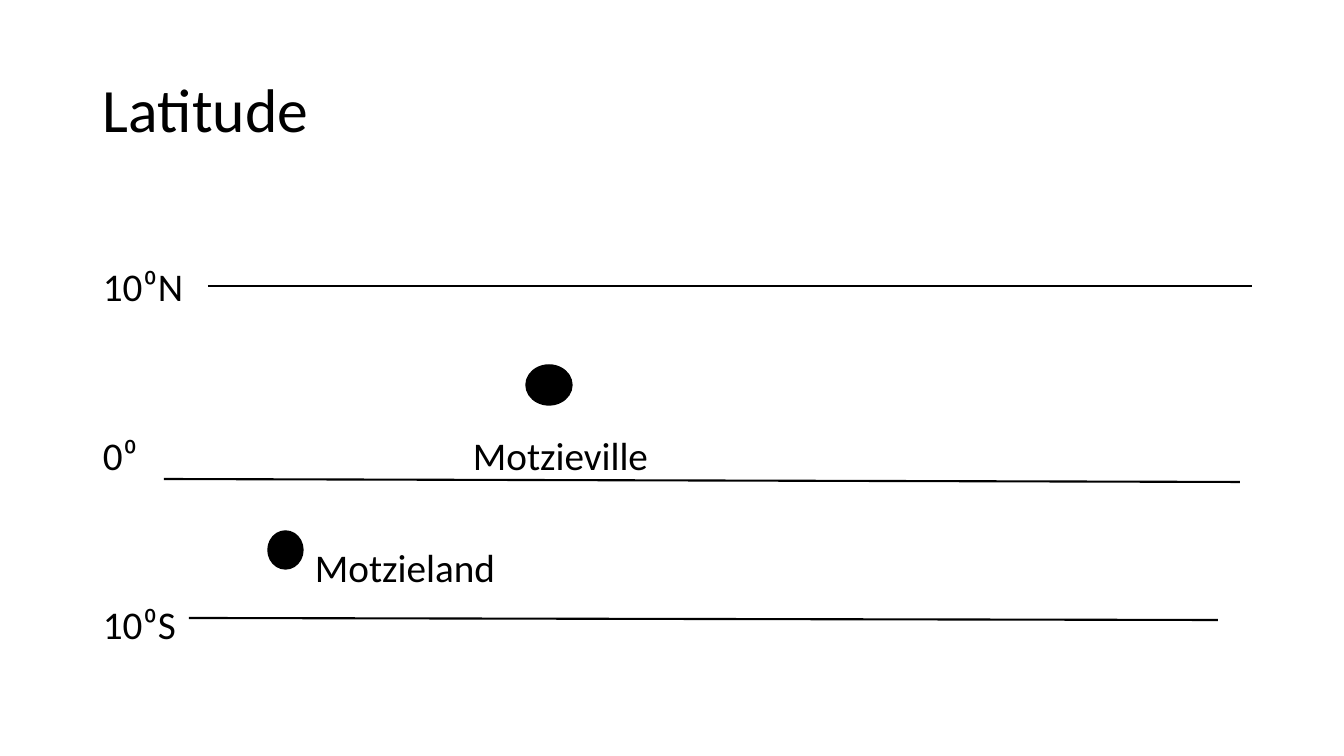
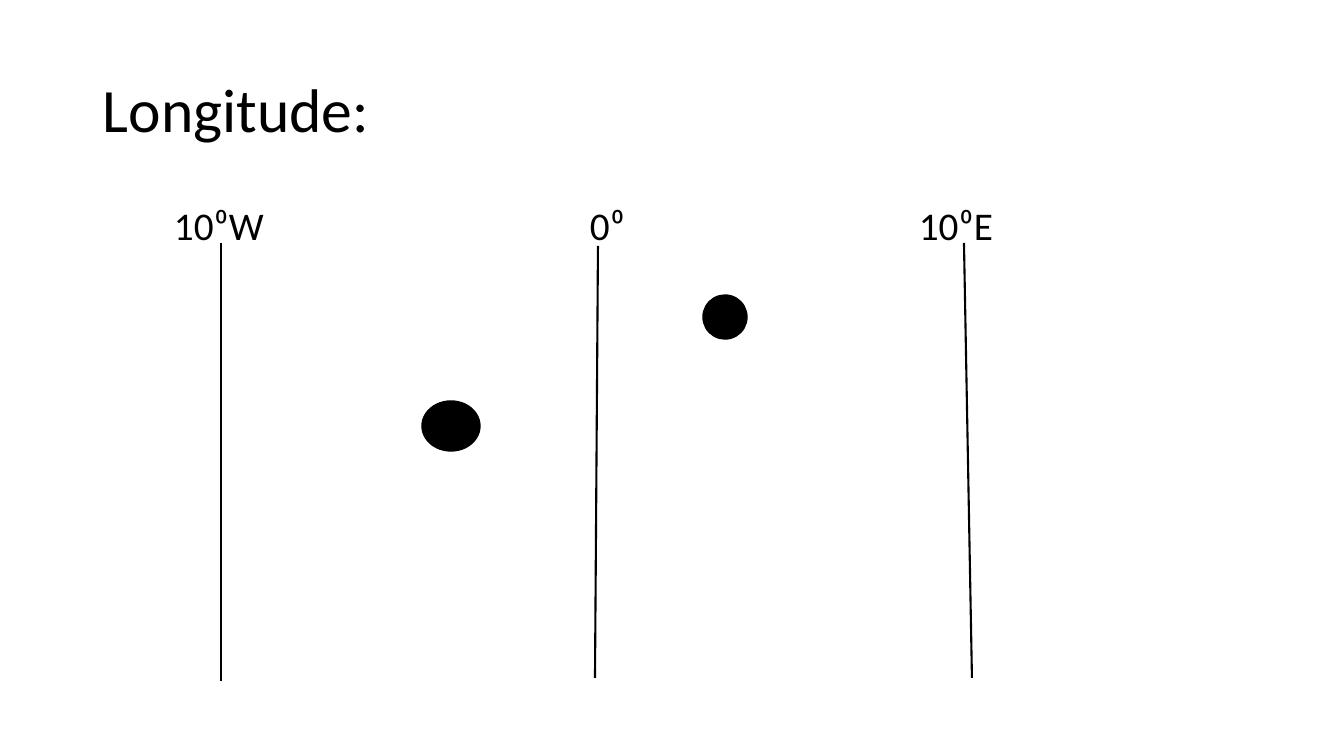
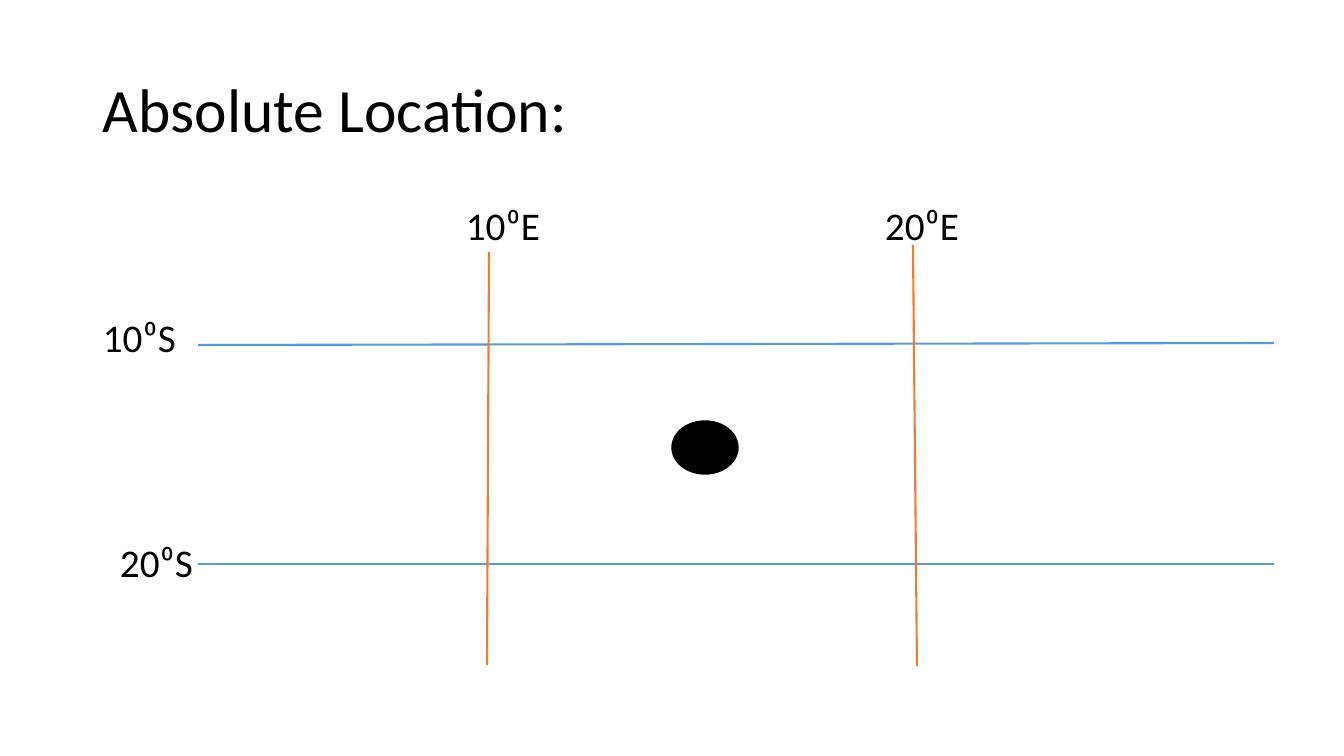
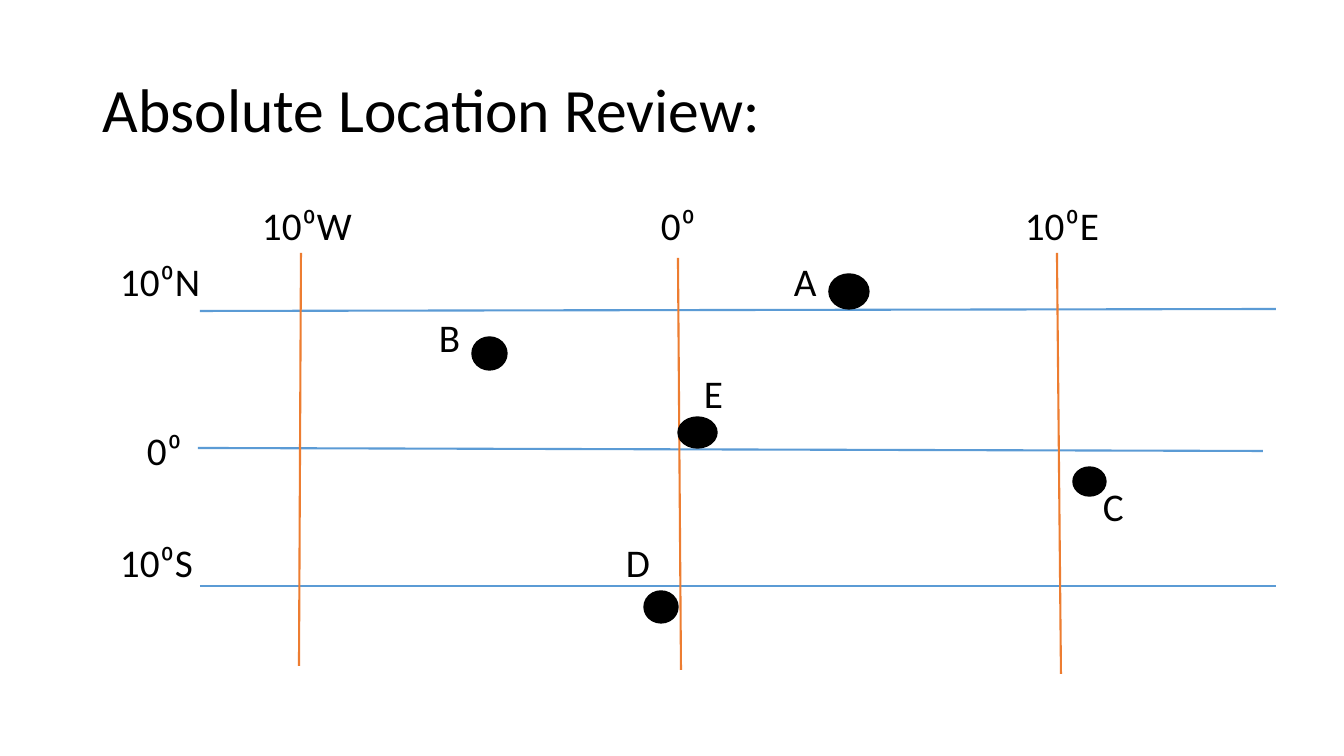
from lxml import etree
from pptx import Presentation
from pptx import util as u
from pptx.dml.color import RGBColor
from pptx.enum import shapes, text
from pptx.oxml import ns

BLACK = RGBColor(0x00, 0x00, 0x00)
ORANGE = RGBColor(0xED, 0x7D, 0x31)
BLUE = RGBColor(0x5B, 0x9B, 0xD5)
FONT = "Calibri"
PIXEL = 914400 / 100.8
ROWS_TOP = 207
SEVEN_ROWS = 394


def px(*lengths):
    return [u.Emu(round(length * PIXEL)) for length in lengths]


def write(frame, content, size=28, margin=0, anchor=text.MSO_ANCHOR.TOP):
    frame.word_wrap = True
    frame.auto_size = text.MSO_AUTO_SIZE.NONE
    frame.vertical_anchor = anchor
    frame.margin_left = frame.margin_right = px(margin)[0]
    frame.margin_top = frame.margin_bottom = 0
    frame.text = content
    paragraph = frame.paragraphs[0]
    paragraph.alignment = text.PP_ALIGN.LEFT
    paragraph.line_spacing = 0.9
    paragraph.font.name = FONT
    paragraph.font.size = u.Pt(size)
    paragraph.font.color.rgb = BLACK


lessons = [
    {
        "title": "Latitude",
        "drop": 5,
        "labels": [
            ("10⁰N", 103, 1), ("0⁰", 103, 4), ("Motzieville", 473, 4),
            ("Motzieland", 315, 6), ("10⁰S", 103, 7),
        ],
        "parallels": [(208, 286, 1252, 286), (164, 479, 1240, 482), (189, 618, 1218, 620)],
        "meridians": [],
        "colors": (BLACK, BLACK),
        "towns": [(526, 365, 46, 40), (268, 531, 35, 38)],
    },
    {
        "title": "Longitude:",
        "drop": 0,
        "labels": [("10⁰W", 174, 0), ("0⁰", 590, 0), ("10⁰E", 919, 0)],
        "parallels": [],
        "meridians": [(221, 243, 221, 681), (598, 246, 595, 678), (964, 243, 972, 678)],
        "colors": (BLACK, BLACK),
        "towns": [(422, 401, 58, 50), (703, 295, 44, 44)],
    },
    {
        "title": "Absolute Location:",
        "drop": 0,
        "labels": [("10⁰E", 466, 0), ("20⁰E", 885, 0), ("10⁰S", 103, 2), ("20⁰S", 120, 6)],
        "parallels": [(198, 345, 1274, 343), (198, 564, 1274, 564)],
        "meridians": [(489, 252, 487, 665), (913, 245, 917, 666)],
        "colors": (BLUE, ORANGE),
        "towns": [(672, 421, 66, 53)],
    },
    {
        "title": "Absolute Location Review:",
        "drop": 0,
        "labels": [
            ("10⁰W", 262, 0), ("0⁰", 661, 0), ("10⁰E", 1025, 0),
            ("10⁰N", 120, 1), ("A", 794, 1), ("B", 439, 2), ("E", 704, 3),
            ("0⁰", 147, 4), ("C", 1103, 5), ("10⁰S", 120, 6), ("D", 626, 6),
        ],
        "parallels": [(200, 311, 1276, 309), (198, 448, 1263, 451), (200, 586, 1276, 586)],
        "meridians": [(301, 253, 299, 666), (678, 258, 681, 670), (1057, 253, 1061, 674)],
        "colors": (BLUE, ORANGE),
        "towns": [
            (829, 274, 40, 35), (472, 337, 35, 33), (1073, 467, 33, 29),
            (644, 591, 34, 32), (678, 417, 39, 31),
        ],
    },
]

deck = Presentation()
deck.slide_width, deck.slide_height = px(1344, 756)
title_only = deck.slide_layouts[5]

for lesson in lessons:
    slide = deck.slides.add_slide(title_only)
    title = slide.shapes.title
    title.left, title.top, title.width, title.height = px(93, 40, 1159, 146)
    write(title.text_frame, lesson["title"], size=44, margin=10, anchor=text.MSO_ANCHOR.MIDDLE)

    for label, left, row in lesson["labels"]:
        top = ROWS_TOP + lesson["drop"] + row * SEVEN_ROWS // 7
        box = slide.shapes.add_textbox(*px(left, top, 200, 43))
        write(box.text_frame, label)

    for group, color in zip(("parallels", "meridians"), lesson["colors"]):
        for ends in lesson[group]:
            grid_line = slide.shapes.add_connector(shapes.MSO_CONNECTOR.STRAIGHT, *px(*ends))
            grid_line.line.color.rgb = color
            grid_line.line.width = u.Pt(1.5)
            etree.SubElement(grid_line._element.spPr, ns.qn("a:effectLst"))

    for place in lesson["towns"]:
        town = slide.shapes.add_shape(shapes.MSO_SHAPE.OVAL, *px(*place))
        town.shadow.inherit = False
        town.fill.solid()
        town.fill.fore_color.rgb = BLACK
        town.line.color.rgb = BLACK
        town.line.width = u.Pt(1)

deck.save("out.pptx")
